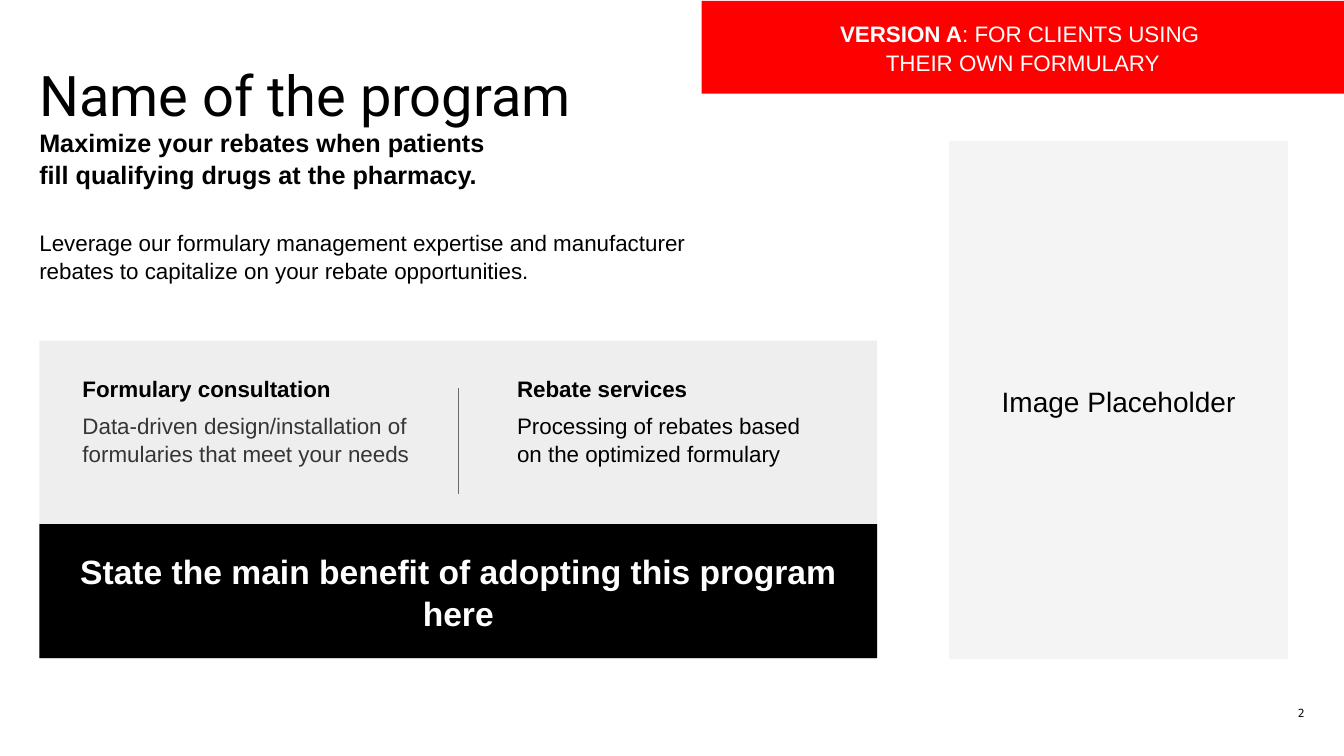
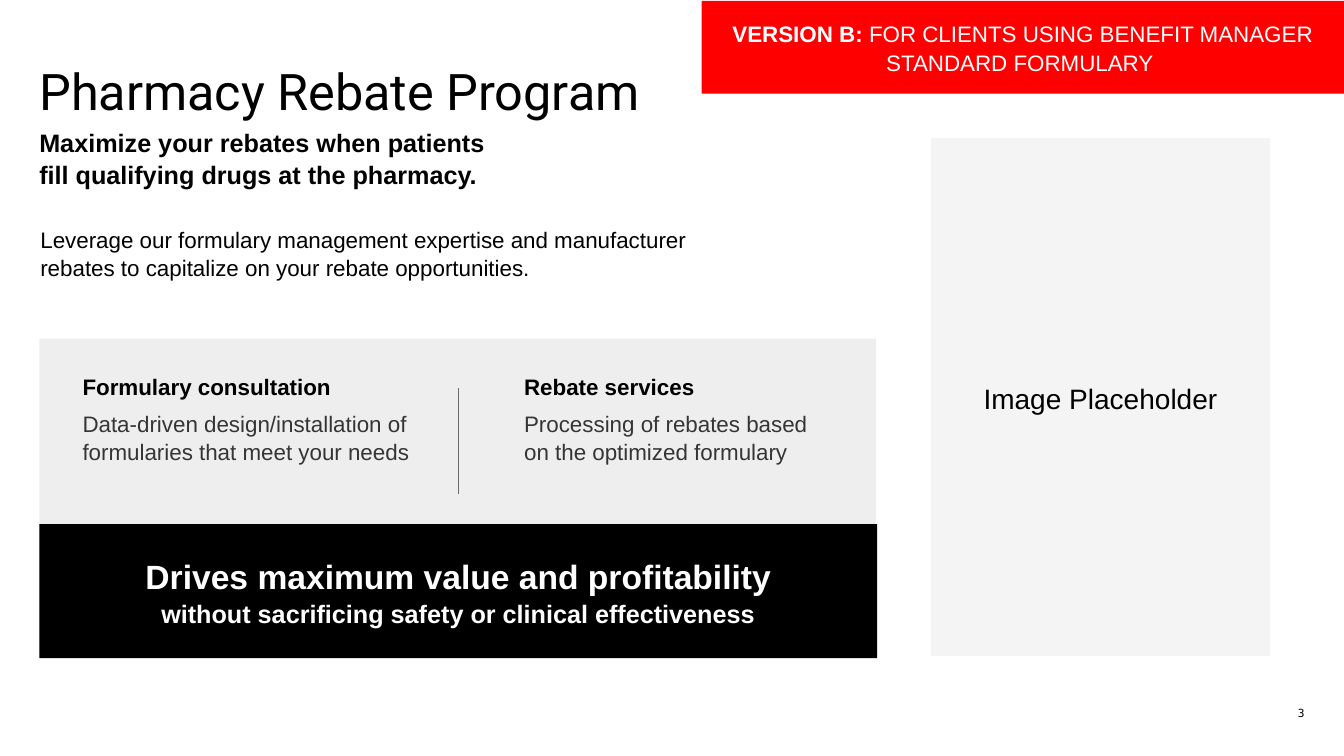
from dataclasses import dataclass
from typing import NamedTuple

from lxml.etree import SubElement
from pptx import Presentation
from pptx.dml.color import RGBColor
from pptx.enum.shapes import MSO_CONNECTOR, MSO_SHAPE
from pptx.enum.text import MSO_ANCHOR, MSO_AUTO_SIZE, PP_ALIGN
from pptx.oxml.ns import qn
from pptx.presentation import Presentation as Deck
from pptx.shapes.autoshape import Shape
from pptx.slide import Slide
from pptx.text.text import TextFrame
from pptx.util import Emu, Pt

EMU_PER_PX = 9144  # 100 px to the inch


def px(length: int) -> Emu:
    return Emu(length * EMU_PER_PX)


@dataclass(frozen=True)
class Theme:
    black: str = "000000"
    white: str = "FFFFFF"
    alert: str = "FF0000"
    panel: str = "EAEAEA"
    panel_opacity: int = 80
    image: str = "F4F4F4"
    divider: str = "6A6A6A"
    muted: str = "353535"
    title_font: str = "Roboto"
    body_font: str = "Arial"
    number_font: str = "DejaVu Sans Mono"
    number_size: int = 8
    body_size: int = 16
    lead_size: int = 18
    image_size: int = 20
    benefit_size: int = 24
    line_spacing: float = 1.05


THEME = Theme()


class Box(NamedTuple):
    left: int
    top: int
    width: int
    height: int


class Insets(NamedTuple):
    left: int = 10
    top: int = 5
    right: int = 10
    bottom: int = 5


class Span(NamedTuple):
    text: str  # "\v" marks a line break
    size: int = THEME.body_size
    color: str = THEME.black
    bold: bool = False
    font: str = THEME.body_font


class Para(NamedTuple):
    spans: tuple[Span, ...]
    space_after: int = 0


class Service(NamedTuple):
    heading: str
    detail: str
    detail_color: str
    left: int
    width: int


@dataclass(frozen=True)
class ProgramSlide:
    number: int
    title: Span
    title_height: int
    version: tuple[Span, ...]
    benefit: tuple[Span, ...]
    services: tuple[Service, ...]
    intro: tuple[int, int]
    services_top: int
    panel: Box
    image: Box


NO_INSETS = Insets(0, 0, 0, 0)
BANNER = Box(696, 1, 637, 92)
BENEFIT_BAND = Box(39, 520, 831, 133)
LEAD = Box(39, 120, 724, 71)
PAGE_NUMBER = Box(1265, 694, 29, 20)
DIVIDER_X, DIVIDER_TOP, DIVIDER_BOTTOM = 455, 385, 490

LEAD_TEXT = "Maximize your rebates when patients \vfill qualifying drugs at the pharmacy."
INTRO_TEXT = ("Leverage our formulary management expertise and manufacturer "
              "rebates to capitalize on your rebate opportunities.")
CONSULTATION = ("Formulary consultation",
                "Data-driven design/installation of formularies that meet your needs")
REBATES = ("Rebate services", "Processing of rebates based \von the optimized formulary")


# Text
def write(frame: TextFrame, paras: list[Para], align: PP_ALIGN = PP_ALIGN.LEFT,
          anchor: MSO_ANCHOR = MSO_ANCHOR.TOP, insets: Insets = Insets()) -> None:
    frame.word_wrap = True
    frame.auto_size = MSO_AUTO_SIZE.NONE
    frame.vertical_anchor = anchor
    frame.margin_left, frame.margin_top, frame.margin_right, frame.margin_bottom = map(px, insets)
    for index, para in enumerate(paras):
        paragraph = frame.paragraphs[0] if index == 0 else frame.add_paragraph()
        paragraph.alignment = align
        paragraph.line_spacing = THEME.line_spacing
        paragraph.space_after = Pt(para.space_after)
        for span in para.spans:
            for part, text in enumerate(span.text.split("\v")):
                if part:
                    paragraph.add_line_break()
                    # The break takes the size of its own line
                    SubElement(paragraph._p[-1], qn("a:rPr"), sz=str(span.size * 100))
                if text:
                    run = paragraph.add_run()
                    run.text = text
                    run.font.name = span.font
                    run.font.size = Pt(span.size)
                    run.font.bold = span.bold
                    run.font.color.rgb = RGBColor.from_string(span.color)


def add_text(slide: Slide, box: Box, paras: list[Para], align: PP_ALIGN = PP_ALIGN.LEFT,
             anchor: MSO_ANCHOR = MSO_ANCHOR.TOP, insets: Insets = Insets()) -> Shape:
    holder = slide.shapes.add_textbox(*map(px, box))
    write(holder.text_frame, paras, align, anchor, insets)
    return holder


# Filled areas and lines
def add_block(slide: Slide, box: Box, color: str, spans: tuple[Span, ...] = (),
              insets: Insets = Insets(), outlined: bool = False) -> Shape:
    block = slide.shapes.add_shape(MSO_SHAPE.RECTANGLE, *map(px, box))
    block.shadow.inherit = False
    block.fill.solid()
    block.fill.fore_color.rgb = RGBColor.from_string(color)
    if outlined:
        block.line.color.rgb = RGBColor.from_string(color)
        block.line.width = Pt(1)
    else:
        block.line.fill.background()
    if spans:
        write(block.text_frame, [Para(spans)], PP_ALIGN.CENTER, MSO_ANCHOR.MIDDLE, insets)
    return block


def add_panel(slide: Slide, box: Box) -> None:
    panel = add_block(slide, box, THEME.panel)
    color = panel._element.spPr.find(".//" + qn("a:srgbClr"))
    SubElement(color, qn("a:alpha"), val=str(THEME.panel_opacity * 1000))


def add_divider(slide: Slide) -> None:
    divider = slide.shapes.add_connector(
        MSO_CONNECTOR.STRAIGHT, px(DIVIDER_X), px(DIVIDER_TOP), px(DIVIDER_X), px(DIVIDER_BOTTOM))
    divider.line.color.rgb = RGBColor.from_string(THEME.divider)
    divider.line.width = Pt(1)
    SubElement(divider._element.spPr, qn("a:effectLst"))


# Slide parts
def add_title(slide: Slide, title: Span, height: int) -> None:
    heading = slide.shapes.title
    heading.left, heading.top, heading.width, heading.height = map(px, Box(39, 57, 830, height))
    write(heading.text_frame, [Para((title,))], insets=NO_INSETS)


def add_service(slide: Slide, service: Service, top: int) -> None:
    add_text(slide, Box(service.left, top, service.width, 99), [
        Para((Span(service.heading, bold=True),), 6),
        Para((Span(service.detail, color=service.detail_color),), 6),
    ])


def add_page_number(slide: Slide, number: int) -> None:
    digits = Span(str(number), THEME.number_size, font=THEME.number_font)
    holder = add_text(slide, PAGE_NUMBER, [Para((digits,))], PP_ALIGN.RIGHT,
                      MSO_ANCHOR.BOTTOM, NO_INSETS)
    holder.text_frame.paragraphs[0].runs[0].font._element.set("spc", "80")


def add_program_slide(deck: Deck, content: ProgramSlide) -> None:
    slide = deck.slides.add_slide(deck.slide_layouts.get_by_name("Title Only"))
    add_panel(slide, content.panel)
    add_page_number(slide, content.number)
    add_title(slide, content.title, content.title_height)
    add_text(slide, Box(*content.intro, 705, 64), [Para((Span(INTRO_TEXT),), 12)],
             insets=Insets(left=0))
    for service in content.services:
        add_service(slide, service, content.services_top)
    add_block(slide, BENEFIT_BAND, THEME.black, content.benefit)
    add_divider(slide)
    add_text(slide, LEAD, [Para((Span(LEAD_TEXT, THEME.lead_size, bold=True),))],
             insets=Insets(left=0, right=0))
    add_block(slide, BANNER, THEME.alert, content.version, NO_INSETS)
    add_block(slide, content.image, THEME.image, (Span("Image Placeholder", THEME.image_size),),
              Insets(8, 4, 8, 4), outlined=True)


# Content
PROGRAM_SLIDES = (
    ProgramSlide(
        number=2,
        title=Span("Name of the program", 40, font=THEME.title_font),
        title_height=57,
        version=(Span("VERSION A", color=THEME.white, bold=True),
                 Span(": FOR CLIENTS USING \vTHEIR OWN FORMULARY", color=THEME.white)),
        benefit=(Span("State the main benefit of adopting this program here",
                      THEME.benefit_size, THEME.white, True),),
        services=(Service(*CONSULTATION, THEME.muted, 72, 360),
                  Service(*REBATES, THEME.black, 503, 360)),
        intro=(39, 221),
        services_top=366,
        panel=Box(39, 338, 831, 316),
        image=Box(942, 141, 335, 512),
    ),
    ProgramSlide(
        number=3,
        title=Span("Pharmacy Rebate Program", 36, font=THEME.title_font),
        title_height=110,
        version=(Span("VERSION B:", color=THEME.white, bold=True),
                 Span(" FOR CLIENTS USING BENEFIT MANAGER STANDARD FORMULARY ",
                      color=THEME.white)),
        benefit=(Span("Drives maximum value and profitability\v",
                      THEME.benefit_size, THEME.white, True),
                 Span("without sacrificing safety or clinical effectiveness",
                      THEME.lead_size, THEME.white, True)),
        services=(Service(*CONSULTATION, THEME.muted, 72, 348),
                  Service(*REBATES, THEME.muted, 510, 360)),
        intro=(40, 218),
        services_top=364,
        panel=Box(39, 336, 830, 316),
        image=Box(924, 138, 335, 512),
    ),
)


def main() -> None:
    deck = Presentation()
    deck.slide_width, deck.slide_height = px(1333), px(750)
    for content in PROGRAM_SLIDES:
        add_program_slide(deck, content)
    deck.save("out.pptx")


if __name__ == "__main__":
    main()
